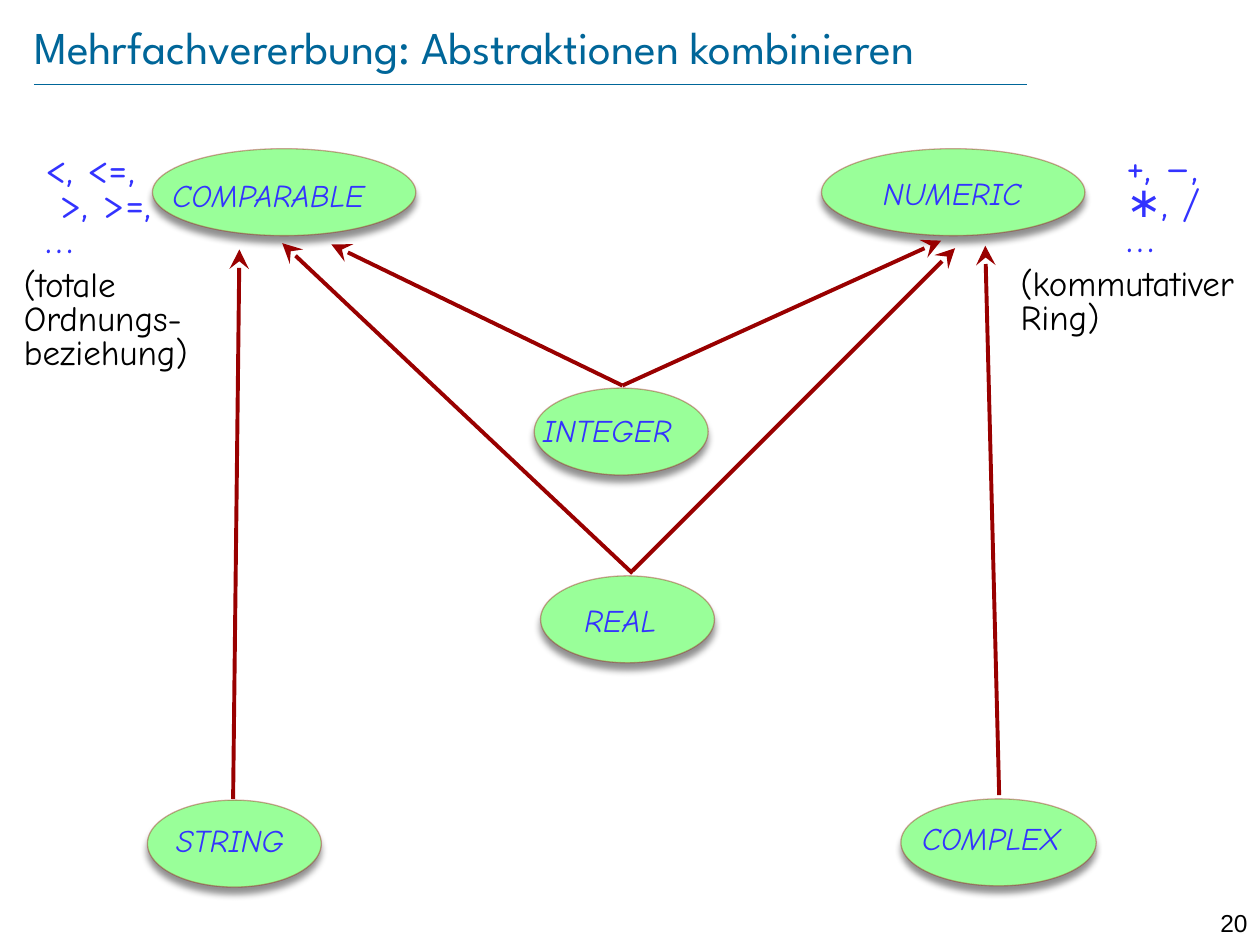
from typing import NamedTuple

import pptx
import pptx.dml.color
import pptx.enum.shapes
import pptx.enum.text
import pptx.oxml
import pptx.oxml.ns
import pptx.util
from pptx.util import Inches

RGBColor = pptx.dml.color.RGBColor
TEAL = RGBColor(0x00, 0x66, 0x99)
GREEN = RGBColor(0x99, 0xFF, 0x99)
DARK_RED = RGBColor(0x99, 0x00, 0x00)
BLUE = RGBColor(0x33, 0x33, 0xFF)
BLACK = RGBColor(0x00, 0x00, 0x00)
HAND_FONT = "Comic Neue"
NAMESPACE = pptx.oxml.ns.nsdecls("a")


class ClassNode(NamedTuple):
    """A class ellipse and the box of its name, in inches."""
    name: str
    left: float
    top: float
    width: float
    label_left: float
    label_top: float
    label_width: float


class Inheritance(NamedTuple):
    """An arrow from heir to parent, in inches."""
    heir: tuple[float, float]
    parent: tuple[float, float]


class Note(NamedTuple):
    text: str
    box: tuple[float, float, float, float]
    size: int
    color: RGBColor
    inset: tuple[float, float]
    line_spacing: float


CLASSES = [
    ClassNode("COMPARABLE", 1.21, 1.18, 2.09, 1.27, 1.35, 2.05),
    ClassNode("NUMERIC", 6.52, 1.18, 2.09, 6.91, 1.33, 1.57),
    ClassNode("INTEGER", 4.24, 3.08, 1.38, 4.21, 3.21, 1.49),
    ClassNode("REAL", 4.29, 4.57, 1.38, 4.54, 4.72, 0.95),
    ClassNode("STRING", 1.17, 6.35, 1.38, 1.3, 6.47, 1.52),
    ClassNode("COMPLEX", 7.15, 6.34, 1.55, 7.22, 6.45, 1.49),
]
INHERITANCES = [
    Inheritance((4.94, 3.06), (2.63, 1.94)),
    Inheritance((4.94, 3.06), (7.47, 1.91)),
    Inheritance((5.02, 4.53), (7.58, 1.97)),
    Inheritance((5.02, 4.55), (2.24, 1.93)),
    Inheritance((1.85, 6.34), (1.9, 1.98)),
    Inheritance((7.93, 6.31), (7.82, 1.95)),
]
TEXT_INSET = (0.1, 0.05)
NO_INSET = (0, 0)
NOTES = [
    Note("<, <=,\v >, >=, …", (0.26, 1.18, 1.3, 0.96), 24, BLUE, TEXT_INSET, 0.7),
    Note("+, –, ∗, / …", (8.84, 1.17, 0.95, 0.96), 24, BLUE, TEXT_INSET, 0.7),
    Note("(totale Ordnungs-beziehung)", (0.19, 2.15, 1.9, 0.81), 20, BLACK, NO_INSET, 0.8),
    Note("(kommutativer Ring)", (8.1, 2.14, 1.9, 0.54), 20, BLACK, NO_INSET, 0.8),
]


def add_text(slide, text: str, box: tuple[float, float, float, float], size: int,
             color: RGBColor, font: str = HAND_FONT, italic: bool = False,
             inset: tuple[float, float] = TEXT_INSET):
    """Add a one-paragraph text box and return its text frame."""
    frame = slide.shapes.add_textbox(*map(Inches, box)).text_frame
    frame.word_wrap = True
    frame.margin_left = frame.margin_right = Inches(inset[0])
    frame.margin_top = frame.margin_bottom = Inches(inset[1])
    frame.text = text
    for run in frame.paragraphs[0].runs:
        run.font.name = font
        run.font.size = pptx.util.Pt(size)
        run.font.italic = italic or None
        run.font.color.rgb = color
    return frame


def add_note(slide, note: Note) -> None:
    frame = add_text(slide, note.text, note.box, note.size, note.color, inset=note.inset)
    frame.paragraphs[0].line_spacing = note.line_spacing


def add_class_ellipse(slide, node: ClassNode) -> None:
    ellipse = slide.shapes.add_shape(
        pptx.enum.shapes.MSO_SHAPE.OVAL,
        *map(Inches, (node.left, node.top, node.width, 0.69)))
    ellipse.shadow.inherit = False
    ellipse.fill.solid()
    ellipse.fill.fore_color.rgb = GREEN
    ellipse.line.color.rgb = DARK_RED
    ellipse.line.width = pptx.util.Pt(0.75)
    properties = ellipse.element.spPr
    outline_color = properties.find(".//a:ln//a:srgbClr", properties.nsmap)
    outline_color.append(pptx.oxml.parse_xml(f'<a:alpha {NAMESPACE} val="34000"/>'))
    effects = properties.find("a:effectLst", properties.nsmap)
    effects.append(pptx.oxml.parse_xml(
        f'<a:outerShdw {NAMESPACE} blurRad="50800" dist="50800" dir="5400000" '
        'rotWithShape="0"><a:srgbClr val="000000"><a:alpha val="43000"/>'
        '</a:srgbClr></a:outerShdw>'))


def add_class_label(slide, node: ClassNode) -> None:
    add_text(slide, node.name, (node.label_left, node.label_top, node.label_width, 0.4),
             18, BLUE, italic=True)


def add_line(slide, start: tuple[float, float], end: tuple[float, float],
             color: RGBColor, width: float):
    line = slide.shapes.add_connector(
        pptx.enum.shapes.MSO_CONNECTOR.STRAIGHT, *map(Inches, start + end))
    line.line.color.rgb = color
    line.line.width = pptx.util.Pt(width)
    line.element.spPr.append(pptx.oxml.parse_xml(f"<a:effectLst {NAMESPACE}/>"))
    return line


def add_inheritance(slide, inheritance: Inheritance) -> None:
    arrow = add_line(slide, inheritance.heir, inheritance.parent, DARK_RED, 2.25)
    arrow.line._get_or_add_ln().append(pptx.oxml.parse_xml(
        f'<a:tailEnd {NAMESPACE} type="stealth" w="lg" len="lg"/>'))


def main() -> None:
    presentation = pptx.Presentation()
    presentation.slide_width = Inches(10)
    presentation.slide_height = Inches(7.5)
    slide = presentation.slides.add_slide(presentation.slide_layouts[6])

    add_line(slide, (0.27, 0.67), (8.15, 0.67), TEAL, 0.25)
    page_number = add_text(slide, "20", (9.45, 7.16, 0.55, 0.24), 14, BLACK, "Arial")
    page_number.paragraphs[0].alignment = pptx.enum.text.PP_ALIGN.RIGHT
    for node in CLASSES:
        add_class_ellipse(slide, node)
    title = add_text(slide, "Mehrfachvererbung: Abstraktionen kombinieren",
                     (0.27, 0.13, 9.31, 0.48), 26, TEAL, "League Spartan", inset=NO_INSET)
    title.vertical_anchor = pptx.enum.text.MSO_ANCHOR.MIDDLE
    for node in CLASSES:
        add_class_label(slide, node)
    for inheritance in INHERITANCES:
        add_inheritance(slide, inheritance)
    for note in NOTES:
        add_note(slide, note)

    presentation.save("out.pptx")


if __name__ == "__main__":
    main()
